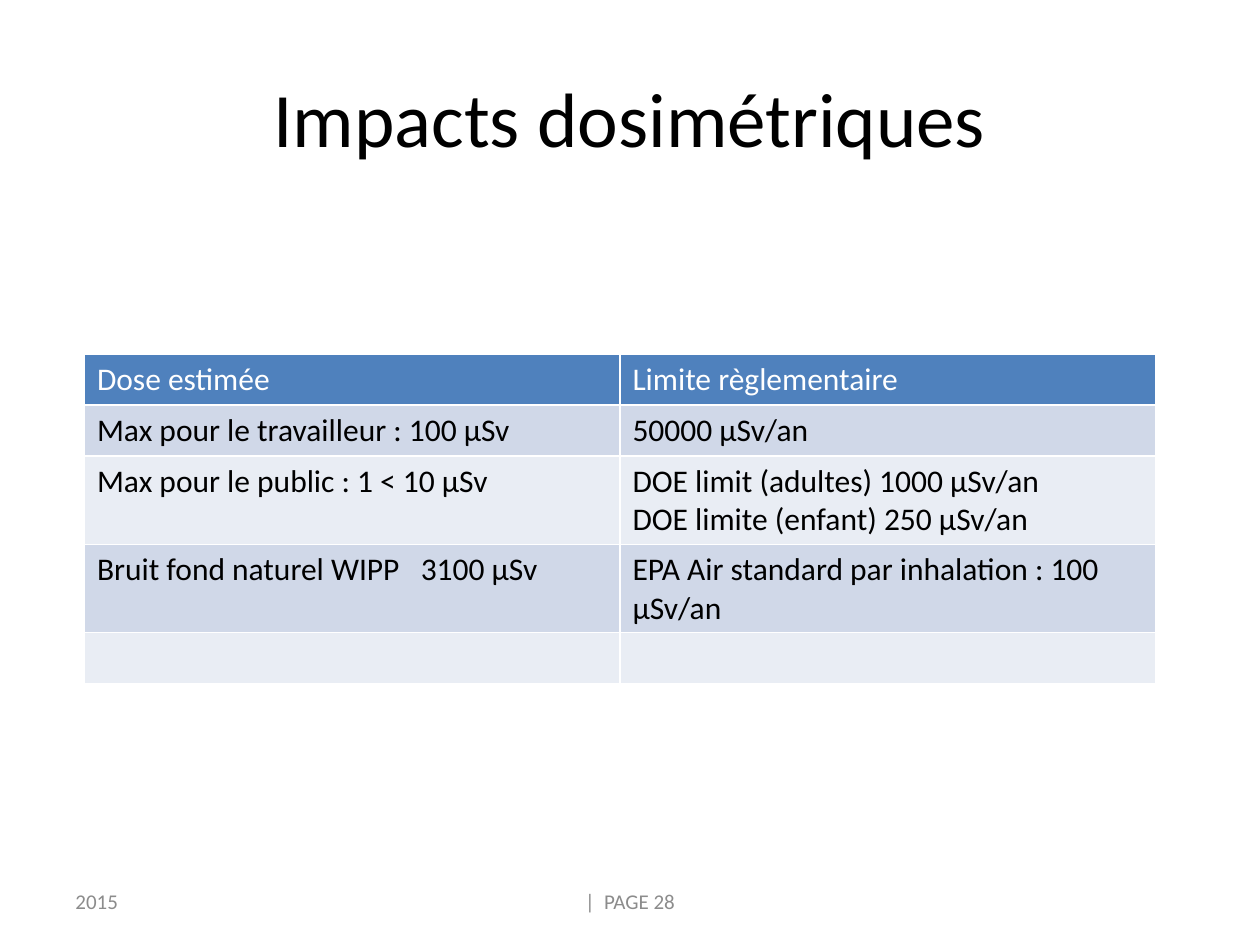
from lxml.etree import SubElement
from pptx import Presentation
from pptx.dml.color import RGBColor
from pptx.enum.text import MSO_ANCHOR as Anchor, PP_ALIGN as Align
from pptx.oxml.ns import qn
from pptx.util import Pt

BLACK = RGBColor(0x00, 0x00, 0x00)
WHITE = RGBColor(0xFF, 0xFF, 0xFF)
GREY = RGBColor(0x8C, 0x8C, 0x8C)
BLUE = RGBColor(0x4F, 0x81, 0xBD)
BANDS = [RGBColor(0xD0, 0xD8, 0xE8), RGBColor(0xE9, 0xED, 0xF4)]
FONT = "Calibri"

TEXTS = [
    ("Impacts dosimétriques", (36, 21.6, 648, 90), 44, BLACK, Align.CENTER),
    ("2015", (36, 500.4, 168, 28.8), 12, GREY, Align.LEFT),
    ("|  PAGE 28", (246, 500.4, 228, 28.8), 12, GREY, Align.CENTER),
]
DOSES = [
    ("Dose estimée", "Limite règlementaire"),
    ("Max pour le travailleur : 100 µSv", "50000 µSv/an"),
    ("Max pour le public : 1 < 10 µSv",
     "DOE limit (adultes) 1000 µSv/an\nDOE limite (enfant) 250 µSv/an"),
    ("Bruit fond naturel WIPP   3100 µSv",
     "EPA Air standard par inhalation : 100 µSv/an"),
    ("", ""),
]
TABLE_LEFT, TABLE_TOP = 48.25, 202.3
COLUMN_WIDTH, ROW_HEIGHT = 306, 29.2
BORDER = Pt(1)


def write(frame, text, size, color, align=Align.LEFT):
    frame.text = text
    for para in frame.paragraphs:
        para.alignment = align
        para.font.name = FONT
        para.font.size = Pt(size)
        para.font.color.rgb = color


def add_text(page, text, place, size, color, align):
    frame = page.shapes.add_textbox(*map(Pt, place)).text_frame
    frame.word_wrap = True
    frame.vertical_anchor = Anchor.MIDDLE
    write(frame, text, size, color, align)


def add_borders(cell):
    properties = cell._tc.get_or_add_tcPr()
    for side in ("lnL", "lnR", "lnT", "lnB"):
        line = SubElement(properties, qn(f"a:{side}"), w=str(BORDER))
        fill = SubElement(line, qn("a:solidFill"))
        SubElement(fill, qn("a:srgbClr"), val=str(WHITE))


def add_doses(page):
    rows, columns = len(DOSES), len(DOSES[0])
    table = page.shapes.add_table(
        rows, columns, Pt(TABLE_LEFT), Pt(TABLE_TOP),
        Pt(columns * COLUMN_WIDTH), Pt(rows * ROW_HEIGHT)).table
    for row, texts in enumerate(DOSES):
        header = row == 0
        for column, text in enumerate(texts):
            cell = table.cell(row, column)
            add_borders(cell)
            cell.fill.solid()
            cell.fill.fore_color.rgb = BLUE if header else BANDS[(row - 1) % 2]
            write(cell.text_frame, text, 18, WHITE if header else BLACK)
            for para in cell.text_frame.paragraphs:
                para.font.bold = False


def main():
    deck = Presentation()
    deck.slide_width, deck.slide_height = Pt(720), Pt(540)
    page = deck.slides.add_slide(deck.slide_layouts[6])
    for item in TEXTS:
        add_text(page, *item)
    add_doses(page)
    deck.save("out.pptx")


if __name__ == "__main__":
    main()
